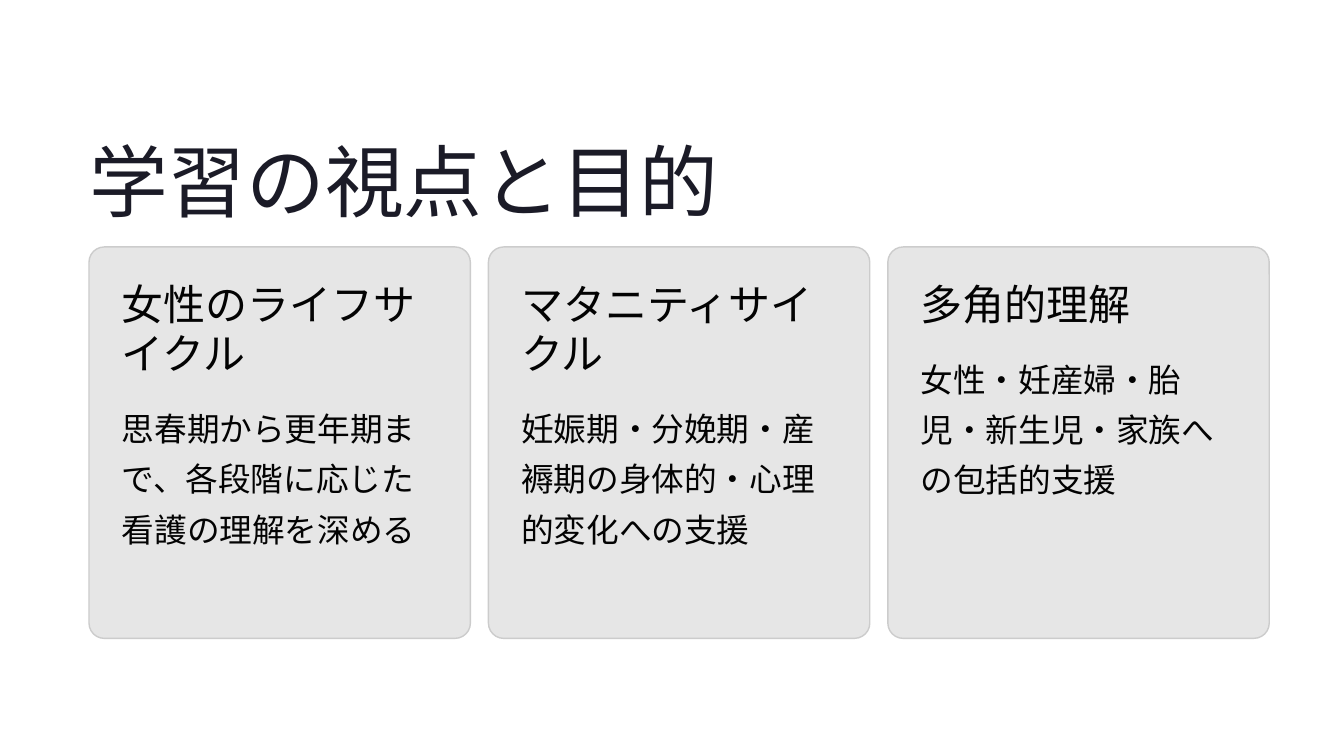
from dataclasses import dataclass

from pptx import Presentation
from pptx.dml.color import RGBColor
from pptx.enum.shapes import MSO_SHAPE
from pptx.enum.text import MSO_ANCHOR, MSO_AUTO_SIZE, PP_ALIGN
from pptx.util import Inches, Pt


@dataclass(frozen=True)
class Theme:
    title_color: RGBColor = RGBColor.from_string("1B1B27")
    text_color: RGBColor = RGBColor.from_string("030303")
    card_fill: RGBColor = RGBColor.from_string("E6E6E6")
    card_line: RGBColor = RGBColor.from_string("CCCCCC")
    heading_font: str = "Inter"
    body_font: str = "Cabin"
    title_size: float = 67.5
    heading_size: float = 36
    body_size: float = 28


theme = Theme()


def write_text(shape, text, font_name, size, line_spacing, color, wrap=True):
    frame = shape.text_frame
    frame.text = text
    frame.word_wrap = wrap
    frame.auto_size = MSO_AUTO_SIZE.NONE
    frame.vertical_anchor = MSO_ANCHOR.TOP
    frame.margin_left = frame.margin_right = 0
    frame.margin_top = frame.margin_bottom = 0
    paragraph = frame.paragraphs[0]
    paragraph.alignment = PP_ALIGN.LEFT
    paragraph.line_spacing = Pt(line_spacing)
    font = paragraph.runs[0].font
    font.name = font_name
    font.size = Pt(size)
    font.color.rgb = color


presentation = Presentation()
presentation.slide_width = Inches(16)
presentation.slide_height = Inches(9)
slide = presentation.slides.add_slide(presentation.slide_layouts[5])

# Title
title = slide.shapes.title
title.left, title.top = Inches(1.06), Inches(1.53)
title.width, title.height = Inches(9.43), Inches(1.18)
write_text(title, "学習の視点と目的", theme.heading_font, theme.title_size,
           84.5, theme.title_color, wrap=False)

# Three equal cards: heading, body, heading height, body top
cards = [
    ("女性のライフサイクル",
     "思春期から更年期まで、各段階に応じた看護の理解を深める", 1.37, 4.74),
    ("マタニティサイクル",
     "妊娠期・分娩期・産褥期の身体的・心理的変化への支援", 1.37, 4.74),
    ("多角的理解",
     "女性・妊産婦・胎児・新生児・家族への包括的支援", 0.69, 4.15),
]
card_left, card_right, card_top = 1.06, 15.11, 2.94
card_width, card_height, padding = 4.54, 4.66, 0.39
card_pitch = (card_right - card_left - card_width) / (len(cards) - 1)
text_width = 3.72

for index, (heading, body, heading_height, body_top) in enumerate(cards):
    left = card_left + index * card_pitch
    card = slide.shapes.add_shape(
        MSO_SHAPE.ROUNDED_RECTANGLE, Inches(left), Inches(card_top),
        Inches(card_width), Inches(card_height))
    card.adjustments[0] = 0.04
    card.shadow.inherit = False
    card.fill.solid()
    card.fill.fore_color.rgb = theme.card_fill
    card.line.color.rgb = theme.card_line
    card.line.width = Pt(1.2)

    text_left = Inches(left + padding)
    heading_box = slide.shapes.add_textbox(
        text_left, Inches(card_top + padding),
        Inches(text_width), Inches(heading_height))
    write_text(heading_box, heading, theme.heading_font, theme.heading_size,
               42, theme.text_color)

    body_box = slide.shapes.add_textbox(
        text_left, Inches(body_top), Inches(text_width), Inches(2.11))
    write_text(body_box, body, theme.body_font, theme.body_size,
               43, theme.text_color)

presentation.save("out.pptx")
